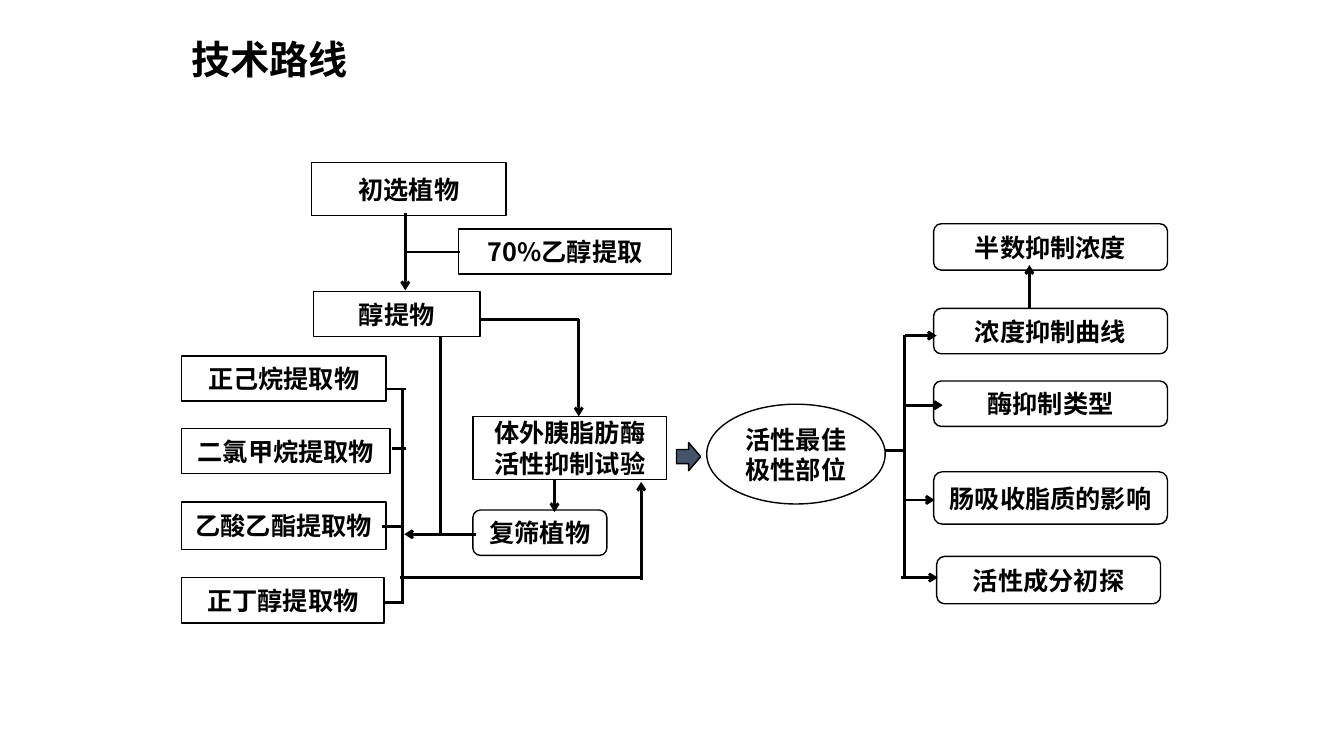
from lxml.etree import SubElement
from pptx import Presentation
from pptx.dml.color import RGBColor
from pptx.enum.shapes import MSO_CONNECTOR, MSO_SHAPE
from pptx.enum.text import MSO_ANCHOR, MSO_AUTO_SIZE, PP_ALIGN
from pptx.oxml.ns import qn
from pptx.util import Inches, Pt

BLACK = RGBColor(0x00, 0x00, 0x00)
WHITE = RGBColor(0xFF, 0xFF, 0xFF)
SLATE = RGBColor(0x44, 0x54, 0x6A)

PROCESS = MSO_SHAPE.FLOWCHART_PROCESS
ROUNDED = MSO_SHAPE.FLOWCHART_ALTERNATE_PROCESS

STEPS = [
    (PROCESS, "初选植物", 3.09, 1.61, 1.93, 0.53),
    (PROCESS, "醇提物", 3.11, 2.89, 1.65, 0.45),
    (PROCESS, "70%乙醇提取", 4.55, 2.27, 2.11, 0.45),
    (PROCESS, "体外胰脂肪酶活性抑制试验", 4.69, 4.13, 1.92, 0.63),
    (ROUNDED, "复筛植物", 4.69, 5.06, 1.33, 0.45),
    (MSO_SHAPE.OVAL, "活性最佳极性部位", 7.01, 4.01, 1.77, 0.99),
    (ROUNDED, "活性成分初探", 9.29, 5.52, 2.22, 0.47),
]
EXTRACTS = [
    ("正己烷提取物", 3.53, 2.03, 0.45),
    ("二氯甲烷提取物", 4.25, 2.07, 0.45),
    ("乙酸乙酯提取物", 4.98, 2.03, 0.47),
    ("正丁醇提取物", 5.73, 2.01, 0.45),
]
STUDIES = [
    ("半数抑制浓度", 2.22, 0.46),
    ("浓度抑制曲线", 3.06, 0.45),
    ("酶抑制类型", 3.78, 0.45),
    ("肠吸收脂质的影响", 4.68, 0.52),
]
LINES = [
    (4.04, 2.5, 4.56, 2.5),
    (4.76, 3.17, 5.74, 3.17),
    (4.37, 3.33, 4.37, 5.3),
    (3.99, 3.86, 3.99, 5.98),
    (3.84, 3.86, 4.03, 3.86),
    (3.89, 4.45, 4.03, 4.45),
    (3.79, 5.22, 3.99, 5.22),
    (3.81, 5.98, 4.01, 5.98),
    (3.97, 5.73, 6.37, 5.73),
    (8.78, 4.47, 8.98, 4.47),
    (8.97, 3.32, 8.97, 5.72),
]
ARROWS = [
    (4.02, 2.11, 4.02, 2.88),
    (5.74, 3.16, 5.74, 4.13),
    (5.5, 4.76, 5.5, 5.08),
    (4.72, 5.3, 4.01, 5.3),
    (6.36, 5.75, 6.36, 4.78),
    (10.21, 3.06, 10.21, 2.63),
    (8.98, 3.33, 9.29, 3.33),
    (8.96, 4.02, 9.35, 4.02),
    (8.96, 4.96, 9.27, 4.96),
    (8.94, 5.73, 9.3, 5.73),
]


class FlowSlide:
    font_name = "Noto Sans CJK SC"
    title_size = Pt(28)
    label_size = Pt(18)
    outline_width = Pt(1)
    line_width = Pt(2)

    def __init__(self, slide):
        self.slide = slide

    def add_text(self, paragraph, text, size):
        run = paragraph.add_run()
        run.text = text
        run.font.size = size
        run.font.bold = True
        run.font.color.rgb = BLACK
        run.font.name = self.font_name
        properties = run._r.get_or_add_rPr()
        SubElement(properties, qn("a:ea")).set("typeface", self.font_name)

    def title(self, text, left, top, width, height):
        shape = self.slide.shapes.add_textbox(
            Inches(left), Inches(top), Inches(width), Inches(height))
        shape.text_frame.word_wrap = False
        shape.text_frame.auto_size = MSO_AUTO_SIZE.SHAPE_TO_FIT_TEXT
        self.add_text(shape.text_frame.paragraphs[0], text, self.title_size)

    def shape(self, kind, left, top, width, height, fill=WHITE):
        shape = self.slide.shapes.add_shape(
            kind, Inches(left), Inches(top), Inches(width), Inches(height))
        shape.shadow.inherit = False
        shape.fill.solid()
        shape.fill.fore_color.rgb = fill
        shape.line.color.rgb = BLACK
        shape.line.width = self.outline_width
        return shape

    def box(self, kind, text, left, top, width, height):
        frame = self.shape(kind, left, top, width, height).text_frame
        frame.word_wrap = True
        frame.vertical_anchor = MSO_ANCHOR.MIDDLE
        paragraph = frame.paragraphs[0]
        paragraph.alignment = PP_ALIGN.CENTER
        self.add_text(paragraph, text, self.label_size)

    def line(self, start_x, start_y, end_x, end_y, arrow=False):
        connector = self.slide.shapes.add_connector(
            MSO_CONNECTOR.STRAIGHT, Inches(start_x), Inches(start_y),
            Inches(end_x), Inches(end_y))
        connector.line.color.rgb = BLACK
        connector.line.width = self.line_width
        if arrow:
            outline = connector.line._get_or_add_ln()
            SubElement(outline, qn("a:tailEnd")).set("type", "arrow")
        SubElement(connector._element.spPr, qn("a:effectLst"))


def main():
    presentation = Presentation()
    presentation.slide_width = Inches(13.33)
    presentation.slide_height = Inches(7.5)
    flow = FlowSlide(presentation.slides.add_slide(presentation.slide_layouts[6]))

    flow.title("技术路线", 1.8, 0.3, 1.76, 0.57)
    for step in STEPS:
        flow.box(*step)
    for text, top, width, height in EXTRACTS:
        flow.box(PROCESS, text, 1.8, top, width, height)
    for text, top, height in STUDIES:
        flow.box(ROUNDED, text, 9.26, top, 2.32, height)
    flow.shape(MSO_SHAPE.RIGHT_ARROW, 6.71, 4.39, 0.24, 0.28, SLATE)
    for points in LINES:
        flow.line(*points)
    for points in ARROWS:
        flow.line(*points, arrow=True)

    presentation.save("out.pptx")


if __name__ == "__main__":
    main()
